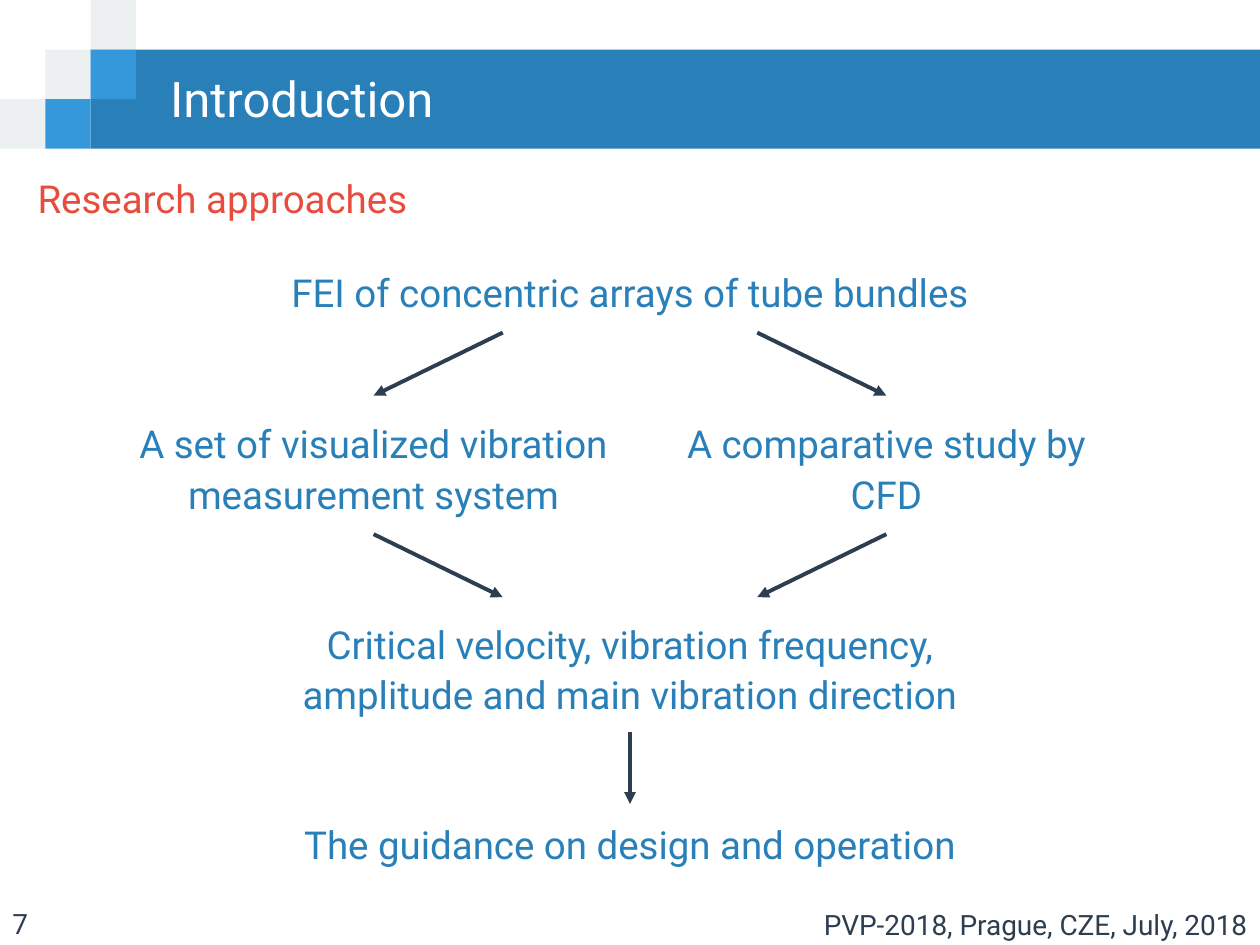
import pptx
import pptx.util
import pptx.dml.color
import pptx.enum.shapes
import pptx.enum.text
import pptx.oxml

Align = pptx.enum.text.PP_ALIGN
Fit = pptx.enum.text.MSO_AUTO_SIZE
Mid = pptx.enum.text.MSO_ANCHOR.MIDDLE
Top = pptx.enum.text.MSO_ANCHOR.TOP

COLORS = {"band": "2980B9", "pale": "ECF0F1", "sky": "3498DB",
          "ink": "2C3E50", "red": "E74C3C", "white": "FFFFFF"}
WIDE, HIGH = 10, 7.5
COL, ROW = 3.6, 5.25
TILES = [
    (2, 1, 26, 2, "band"),
    (0, 2, 1, 1, "pale"),
    (1, 1, 1, 1, "pale"),
    (2, 0, 1, 1, "pale"),
    (2, 1, 1, 1, "sky"),
    (1, 2, 1, 1, "sky"),
]
TITLE = ("Introduction", (12.5, 6.8, 80.8, 7.07))
LABELS = [
    ("PVP-2018, Prague, CZE, July, 2018", (45.8, 95.47, 54.2, 4.67), 16, "ink",
     {"alignment": Align.RIGHT}, {"vertical_anchor": Mid}),
    ("7", (0, 95.33, 23.3, 4.67), 16, "ink", {}, {}),
    ("Research approaches", (2, 17.87, 71.4, 6.27), 22, "red",
     {}, {"auto_size": Fit.SHAPE_TO_FIT_TEXT}),
]
MAIN, SIDE = 59.1, 39.3
ONE, TWO = 6.4, 11.87
SWING = 20.35
STEPS = [
    ("FEI of concentric arrays of tube bundles", 0, 27.33, MAIN, ONE),
    ("A set of visualized vibration measurement system", -SWING, 43.33, SIDE, TWO),
    ("A comparative study by CFD", SWING, 43.33, SIDE, TWO),
    ("Critical velocity, vibration frequency, amplitude and main vibration direction",
     0, 64.53, MAIN, TWO),
    ("The guidance on design and operation", 0, 85.73, MAIN, ONE),
]
NEAR = 10.1
ARROWS = [
    (-NEAR, 35.2, -SWING, 41.87),
    (NEAR, 35.2, SWING, 41.87),
    (-SWING, 56.53, -NEAR, 63.2),
    (SWING, 56.53, NEAR, 63.2),
    (0, 77.47, 0, 85.07),
]
FLOW = {"alignment": Align.CENTER, "line_spacing": 1.1, "space_after": pptx.util.Pt(12)}


def tint(name):
    return pptx.dml.color.RGBColor.from_string(COLORS[name])


def place(x, y):
    return pptx.util.Inches(x * WIDE / 100), pptx.util.Inches(y * HIGH / 100)


def apply(item, looks):
    for key, val in looks.items():
        setattr(item, key, val)


def write(box, text, size, color, para, body):
    frame = box.text_frame
    apply(frame, {"word_wrap": True, "auto_size": Fit.NONE,
                  "vertical_anchor": Top} | body)
    frame.text = text
    line = frame.paragraphs[0]
    apply(line, {"alignment": Align.LEFT} | para)
    apply(line.font, {"name": "Roboto", "size": pptx.util.Pt(size)})
    line.font.color.rgb = tint(color)


def tile(shapes, col, row, wide, high, color):
    kind = pptx.enum.shapes.MSO_SHAPE.RECTANGLE
    box = shapes.add_shape(kind, *place(col * COL, row * ROW),
                           *place(min(wide * COL, 100 - col * COL), high * ROW))
    box.shadow.inherit = False
    box.fill.solid()
    box.fill.fore_color.rgb = tint(color)
    box.line.fill.background()


def label(shapes, text, area, *looks):
    box = shapes.add_textbox(*place(*area[:2]), *place(*area[2:]))
    write(box, text, *looks)


def arrow(shapes, x1, y1, x2, y2):
    kind = pptx.enum.shapes.MSO_CONNECTOR.STRAIGHT
    link = shapes.add_connector(kind, *place(50 + x1, y1), *place(50 + x2, y2))
    link.line.color.rgb = tint("ink")
    link.line.width = pptx.util.Pt(2.25)
    space = 'xmlns:a="http://schemas.openxmlformats.org/drawingml/2006/main"'
    head = pptx.oxml.parse_xml(f'<a:tailEnd {space} type="triangle"/>')
    link.line.fill
    link.element.spPr.find(".//{*}ln").append(head)
    link.element.spPr.append(pptx.oxml.parse_xml(f"<a:effectLst {space}/>"))


def main():
    deck = pptx.Presentation()
    deck.slide_width, deck.slide_height = place(100, 100)
    slide = deck.slides.add_slide(deck.slide_layouts[5])
    shapes = slide.shapes
    for part in TILES:
        tile(shapes, *part)

    text, area = TITLE
    title = shapes.title
    title.element.getparent().append(title.element)
    title.left, title.top = place(*area[:2])
    title.width, title.height = place(*area[2:])
    write(title, text, 28, "white", {}, {"vertical_anchor": Mid})

    for part in LABELS:
        label(shapes, *part)
    for text, shift, top, wide, high in STEPS:
        area = (50 + shift - wide / 2, top, wide, high)
        label(shapes, text, area, 22, "band", FLOW,
              {"auto_size": Fit.SHAPE_TO_FIT_TEXT})
    for part in ARROWS:
        arrow(shapes, *part)
    deck.save("out.pptx")


if __name__ == "__main__":
    main()
